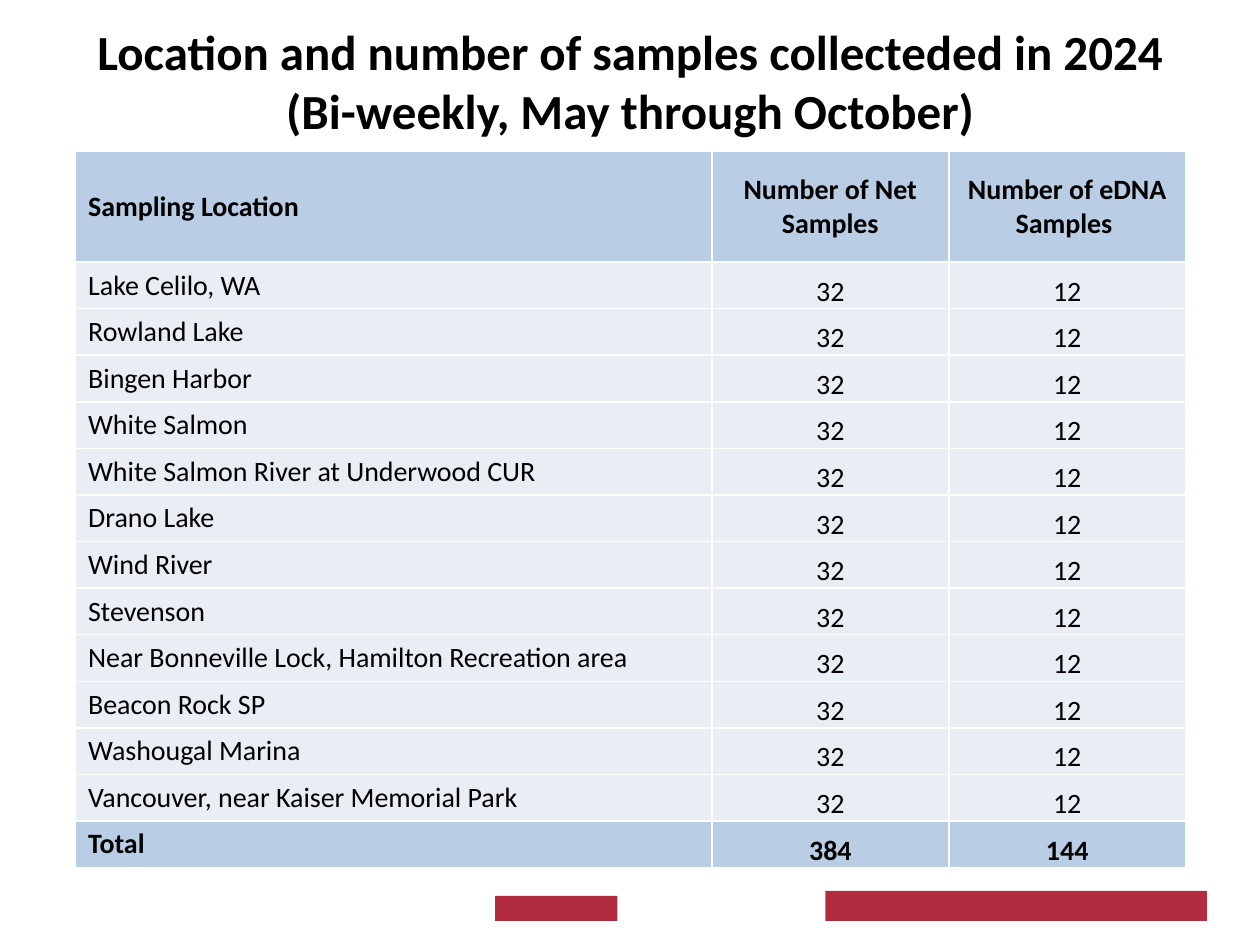
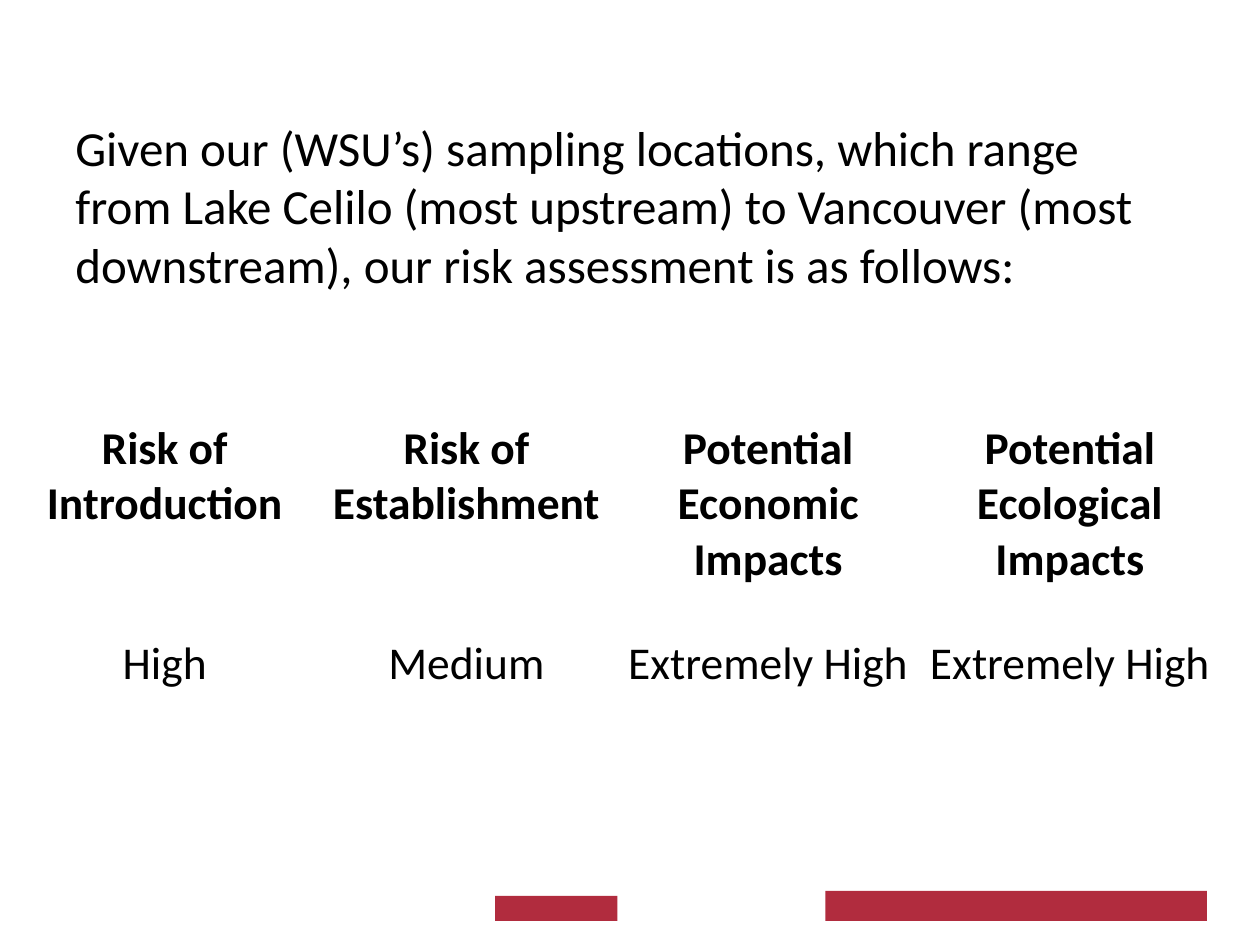
from typing import NamedTuple

from lxml.etree import SubElement
from pptx import Presentation
from pptx.dml.color import RGBColor
from pptx.enum.shapes import MSO_SHAPE
from pptx.enum.text import MSO_ANCHOR, PP_ALIGN
from pptx.oxml.ns import qn
from pptx.slide import Slide
from pptx.table import Table, _Cell
from pptx.text.text import TextFrame
from pptx.util import Inches, Pt

FONT = "Calibri"
BLACK = RGBColor(0x00, 0x00, 0x00)
WHITE = RGBColor(0xFF, 0xFF, 0xFF)
CRIMSON = RGBColor(0xB1, 0x2C, 0x3E)
BLUE = RGBColor(0xB9, 0xCD, 0xE5)
PALE = RGBColor(0xE9, 0xED, 0xF4)


class Box(NamedTuple):
    left: float
    top: float
    width: float
    height: float

    def place(self) -> list[int]:
        return [Inches(side) for side in self]


class Risk(NamedTuple):
    label: str
    level: str


FOOTER = [Box(3.93, 7.11, 0.97, 0.2), Box(6.55, 7.07, 3.03, 0.24)]

SITES = [
    "Lake Celilo, WA", "Rowland Lake", "Bingen Harbor", "White Salmon",
    "White Salmon River at Underwood CUR", "Drano Lake", "Wind River",
    "Stevenson", "Near Bonneville Lock, Hamilton Recreation area",
    "Beacon Rock SP", "Washougal Marina", "Vancouver, near Kaiser Memorial Park",
]
NETS, EDNA = 32, 12  # samples per site

RISKS = [
    Risk("Risk of Introduction", "High"),
    Risk("Risk of Establishment", "Medium"),
    Risk("Potential Economic Impacts", "Extremely High"),
    Risk("Potential Ecological Impacts", "Extremely High"),
]


def write(frame: TextFrame, text: str, *, size: int, bold: bool = False,
          align: PP_ALIGN = PP_ALIGN.LEFT) -> None:
    para = frame.paragraphs[0]
    para.text = text
    para.alignment = align
    for run in para.runs:
        font = run.font
        font.name, font.size, font.bold = FONT, Pt(size), bold
        font.color.rgb = BLACK


def add_text(slide: Slide, box: Box, text: str, *, anchor: MSO_ANCHOR,
             **style) -> None:
    frame = slide.shapes.add_textbox(*box.place()).text_frame
    frame.word_wrap = True
    frame.vertical_anchor = anchor
    write(frame, text, **style)


def add_table(slide: Slide, box: Box, cols: list[float],
              rows: list[float]) -> Table:
    table = slide.shapes.add_table(len(rows), len(cols), *box.place()).table
    table.first_row = table.horz_banding = False
    for col, width in zip(table.columns, cols):
        col.width = Inches(width)
    for row, height in zip(table.rows, rows):
        row.height = Inches(height)
    return table


def tighten(cell: _Cell) -> None:
    cell.margin_left = cell.margin_right = cell.margin_top = Inches(0.01)
    cell.margin_bottom = 0


def add_edges(cell: _Cell) -> None:
    props = cell._tc.get_or_add_tcPr()
    for side in ("L", "R", "T", "B"):
        line = SubElement(props, qn(f"a:ln{side}"), w=str(Pt(1)))
        fill = SubElement(line, qn("a:solidFill"))
        SubElement(fill, qn("a:srgbClr"), val=str(WHITE))


def add_slide(deck: Presentation) -> Slide:
    slide = deck.slides.add_slide(deck.slide_layouts[6])
    for box in FOOTER:
        bar = slide.shapes.add_shape(MSO_SHAPE.RECTANGLE, *box.place())
        bar.shadow.inherit = False
        bar.fill.solid()
        bar.fill.fore_color.rgb = CRIMSON
        bar.line.fill.background()
    return slide


def add_samples(deck: Presentation) -> None:
    slide = add_slide(deck)
    add_text(slide, Box(0, 0.29, 10, 0.7),
             "Location and number of samples collecteded in 2024\n"
             "(Bi-weekly, May through October)",
             anchor=MSO_ANCHOR.MIDDLE, size=28, bold=True,
             align=PP_ALIGN.CENTER)

    # Header, one row per site, total
    count = len(SITES)
    data = [("Sampling Location", "Number of Net Samples",
             "Number of eDNA Samples "),
            *[(site, NETS, EDNA) for site in SITES],
            ("Total", NETS * count, EDNA * count)]
    table = add_table(slide, Box(0.6, 1.2, 8.81, 5.69), [5.05, 1.88, 1.88],
                      [0.88] + [0.37] * (count + 1))
    for r, row in enumerate(data):
        strong = r in (0, count + 1)
        for c, value in enumerate(row):
            cell = table.cell(r, c)
            add_edges(cell)
            cell.fill.solid()
            cell.fill.fore_color.rgb = BLUE if strong else PALE
            cell.vertical_anchor = MSO_ANCHOR.BOTTOM if r else MSO_ANCHOR.MIDDLE
            if c:
                tighten(cell)
            write(cell.text_frame, str(value), size=16, bold=strong,
                  align=PP_ALIGN.CENTER if c else PP_ALIGN.LEFT)


def add_risks(deck: Presentation) -> None:
    slide = add_slide(deck)
    add_text(slide, Box(0.5, 0.88, 9, 2.46),
             "Given our (WSU’s) sampling locations, which range from Lake "
             "Celilo (most upstream) to Vancouver (most downstream), our risk "
             "assessment is as follows:",
             anchor=MSO_ANCHOR.TOP, size=28)

    # Labels above levels
    table = add_table(slide, Box(0.11, 3.33, 9.58, 2.53),
                      [9.58 / len(RISKS)] * len(RISKS), [1.33, 1.2])
    for c, risk in enumerate(RISKS):
        for r, text in enumerate(risk):
            cell = table.cell(r, c)
            cell.fill.background()
            cell.vertical_anchor = MSO_ANCHOR.MIDDLE if r else MSO_ANCHOR.TOP
            tighten(cell)
            write(cell.text_frame, text, size=26, bold=r == 0,
                  align=PP_ALIGN.CENTER)


def main() -> None:
    deck = Presentation()
    deck.slide_width, deck.slide_height = Inches(10), Inches(7.5)
    add_samples(deck)
    add_risks(deck)
    deck.save("out.pptx")


if __name__ == "__main__":
    main()
